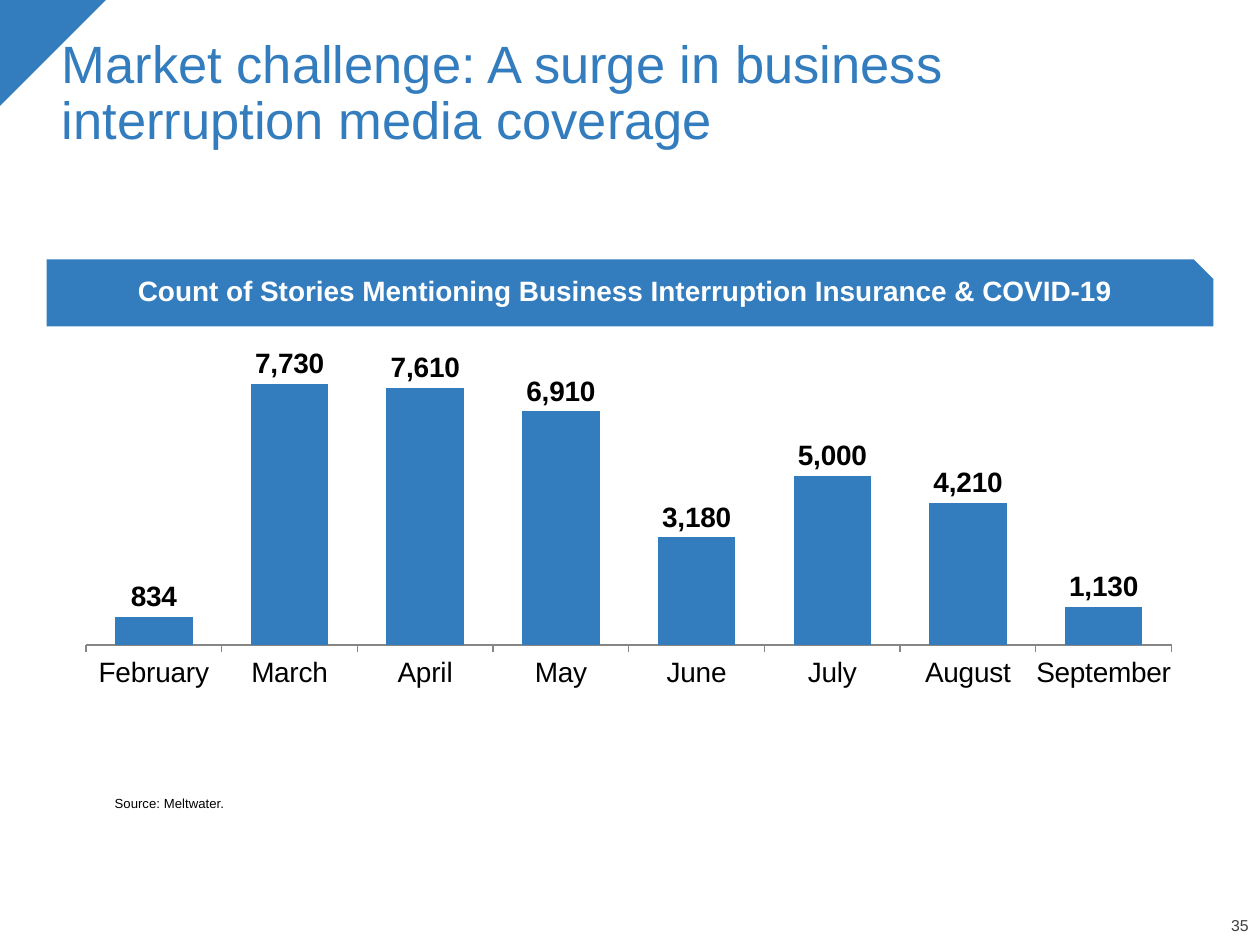
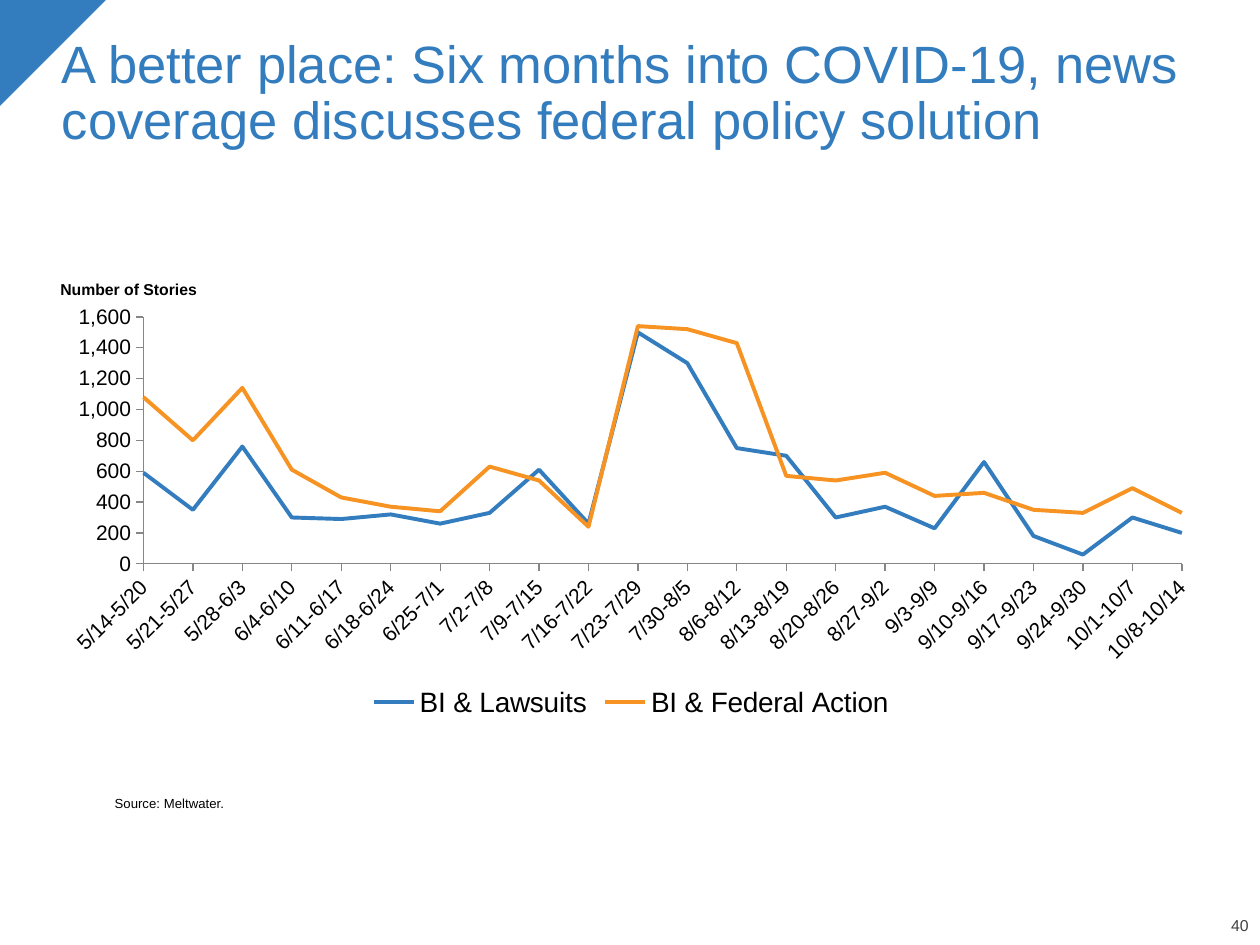
from lxml.etree import SubElement
from pptx import Presentation
from pptx.chart.data import CategoryChartData as Data
from pptx.dml.color import RGBColor as Color
from pptx.enum.chart import XL_CHART_TYPE as Kind, XL_LABEL_POSITION as Spot
from pptx.enum.chart import XL_LEGEND_POSITION as Side, XL_TICK_MARK as Tick
from pptx.enum.shapes import MSO_SHAPE as Shape
from pptx.enum.text import MSO_ANCHOR as Anchor, MSO_AUTO_SIZE as Fit, PP_ALIGN as Align
from pptx.oxml.ns import qn
from pptx.util import Inches, Pt

FONT = "Arial"
HUES = {"blue": "337DBE", "orange": "F69322", "black": "000000",
        "white": "FFFFFF", "gray": "404040", "axis": "868686"}
MONTHS = ["February", "March", "April", "May", "June", "July", "August", "September"]
COUNTS = [834, 7730, 7610, 6910, 3180, 5000, 4210, 1130]
WEEKS = ["5/14-5/20", "5/21-5/27", "5/28-6/3", "6/4-6/10", "6/11-6/17", "6/18-6/24",
         "6/25-7/1", "7/2-7/8", "7/9-7/15", "7/16-7/22", "7/23-7/29", "7/30-8/5",
         "8/6-8/12", "8/13-8/19", "8/20-8/26", "8/27-9/2", "9/3-9/9", "9/10-9/16",
         "9/17-9/23", "9/24-9/30", "10/1-10/7", "10/8-10/14"]
SUITS = [590, 350, 760, 300, 290, 320, 260, 330, 610, 260, 1500,
         1300, 750, 700, 300, 370, 230, 660, 180, 60, 300, 200]
ACTION = [1080, 800, 1140, 610, 430, 370, 340, 630, 540, 240, 1540,
          1520, 1430, 570, 540, 590, 440, 460, 350, 330, 490, 330]


def hue(name):
    return Color.from_string(HUES[name])


def box(x, y, w, h):
    return [Inches(n) for n in (x, y, w, h)]


def style(font, size, color, bold=False):
    font.name = FONT
    font.size = Pt(size)
    font.bold = bold
    font.color.rgb = hue(color)


def write(shape, text, size, color, bold=False, align=Align.LEFT,
          anchor=Anchor.TOP, pads=(0, 0, 0, 0)):
    frame = shape.text_frame
    frame.text = text
    frame.word_wrap = True
    frame.auto_size = Fit.NONE
    frame.vertical_anchor = anchor
    (frame.margin_left, frame.margin_top,
     frame.margin_right, frame.margin_bottom) = box(*pads)
    line = frame.paragraphs[0]
    line.alignment = align
    line.line_spacing = 0.9
    line.space_before = Pt(0)
    style(line.runs[0].font, size, color, bold)


def note(slide, place, text, size, color, **look):
    write(slide.shapes.add_textbox(*box(*place)), text, size, color, **look)


def block(slide, kind, place):
    shape = slide.shapes.add_shape(kind, *box(*place))
    shape.shadow.inherit = False
    shape.fill.solid()
    shape.fill.fore_color.rgb = hue("blue")
    shape.line.fill.background()
    return shape


def banner(slide, text):
    shape = block(slide, Shape.SNIP_1_RECTANGLE, (0.37, 2.06, 9.26, 0.53))
    shape.adjustments[0] = 0.29
    write(shape, text, 16, "white", bold=True, align=Align.CENTER,
          anchor=Anchor.MIDDLE, pads=(0.15, 0.07, 0.15, 0.15))


def start(deck, title, page):
    slide = deck.slides.add_slide(deck.slide_layouts[5])
    corner = block(slide, Shape.RIGHT_TRIANGLE, (0, 0, 0.84, 0.84))
    corner.rotation = 90
    head = slide.shapes.title
    head.left, head.top, head.width, head.height = box(0.39, 0.25, 9.25, 1.04)
    write(head, title, 30, "blue", pads=(0.1, 0.05, 0.1, 0.05))
    slide.shapes._spTree.append(head._element)
    note(slide, (9.43, 7.29, 0.48, 0.13), page, 9, "gray",
         align=Align.RIGHT, anchor=Anchor.BOTTOM)
    note(slide, (0.91, 6.1, 8.73, 0.34), "Source: Meltwater.", 7.5, "black",
         anchor=Anchor.BOTTOM)
    return slide


def set_plot(chart, x, y, w, h):
    area = chart._chartSpace.chart.plotArea
    for old in area.findall(qn("c:layout")):
        area.remove(old)
    layout = SubElement(area, qn("c:layout"))
    area.insert(0, layout)
    manual = SubElement(layout, qn("c:manualLayout"))
    parts = {"layoutTarget": "inner", "xMode": "edge", "yMode": "edge",
             "x": x, "y": y, "w": w, "h": h}
    for tag, val in parts.items():
        SubElement(manual, qn("c:" + tag)).set("val", str(val))


def set_axis(axis, size):
    axis.has_major_gridlines = False
    axis.major_tick_mark = Tick.OUTSIDE
    axis.minor_tick_mark = Tick.NONE
    axis.format.line.color.rgb = hue("axis")
    axis.format.line.width = Pt(0.75)
    style(axis.tick_labels.font, size, "black")


def span_edges(axis):
    node = axis._element
    for old in node.findall(qn("c:crossBetween")):
        node.remove(old)
    cross = SubElement(node, qn("c:crossBetween"))
    cross.set("val", "midCat")
    node.find(qn("c:majorUnit")).addprevious(cross)


def add_chart(slide, kind, place, cats, rows, size, top, plot):
    data = Data(number_format="#,##0")
    data.categories = cats
    for name, vals in rows:
        data.add_series(name, vals)
    chart = slide.shapes.add_chart(kind, *box(*place), data).chart
    chart.has_title = False
    chart.has_legend = False
    style(chart.font, 16, "black")
    set_axis(chart.category_axis, size)
    set_axis(chart.value_axis, size)
    chart.value_axis.minimum_scale = 0
    chart.value_axis.maximum_scale = top
    set_plot(chart, *plot)
    chart.plots[0].vary_by_categories = False
    return chart


def add_bars(slide):
    chart = add_chart(slide, Kind.COLUMN_CLUSTERED, (0.54, 2.59, 8.91, 3.85), MONTHS,
                      [("Series 1", COUNTS)], 16, 9000, (0.016, 0.03, 0.967, 0.627))
    chart.value_axis.visible = False
    plot = chart.plots[0]
    plot.gap_width = 75
    fill = plot.series[0].format.fill
    fill.solid()
    fill.fore_color.rgb = hue("blue")
    plot.has_data_labels = True
    tags = plot.data_labels
    tags.show_value = True
    tags.number_format = "#,##0"
    tags.number_format_is_linked = False
    tags.position = Spot.OUTSIDE_END
    style(tags.font, 16, "black", True)


def add_lines(slide):
    rows = [("BI & Lawsuits", SUITS), ("BI & Federal Action", ACTION)]
    chart = add_chart(slide, Kind.LINE, (0.39, 2.36, 9.24, 3.38), WEEKS, rows,
                      12, 1600, (0.081, 0.046, 0.892, 0.58))
    chart.value_axis.major_unit = 200
    span_edges(chart.value_axis)
    labels = chart.category_axis._element.find(qn("c:txPr"))
    labels.find(qn("a:bodyPr")).set("rot", "-2700000")
    chart.has_legend = True
    chart.legend.position = Side.BOTTOM
    chart.legend.include_in_layout = False
    style(chart.legend.font, 16, "black")
    for row, color in zip(chart.plots[0].series, ("blue", "orange")):
        row.smooth = False
        row.format.line.width = Pt(2.25)
        row.format.line.color.rgb = hue(color)


def main():
    deck = Presentation()
    deck.slide_width, deck.slide_height = Inches(10), Inches(7.5)

    surge = start(deck, "Market challenge: A surge in business interruption media coverage", "35")
    banner(surge, "Count of Stories Mentioning Business Interruption Insurance & COVID-19")
    add_bars(surge)

    better = start(deck, "A better place: Six months into COVID-19, news coverage "
                   "discusses federal policy solution", "40")
    note(better, (0.38, 2.19, 9.25, 0.2), "Number of Stories", 9, "black",
         bold=True, pads=(0.1, 0.05, 0.1, 0.05))
    add_lines(better)

    deck.save("out.pptx")


if __name__ == "__main__":
    main()
